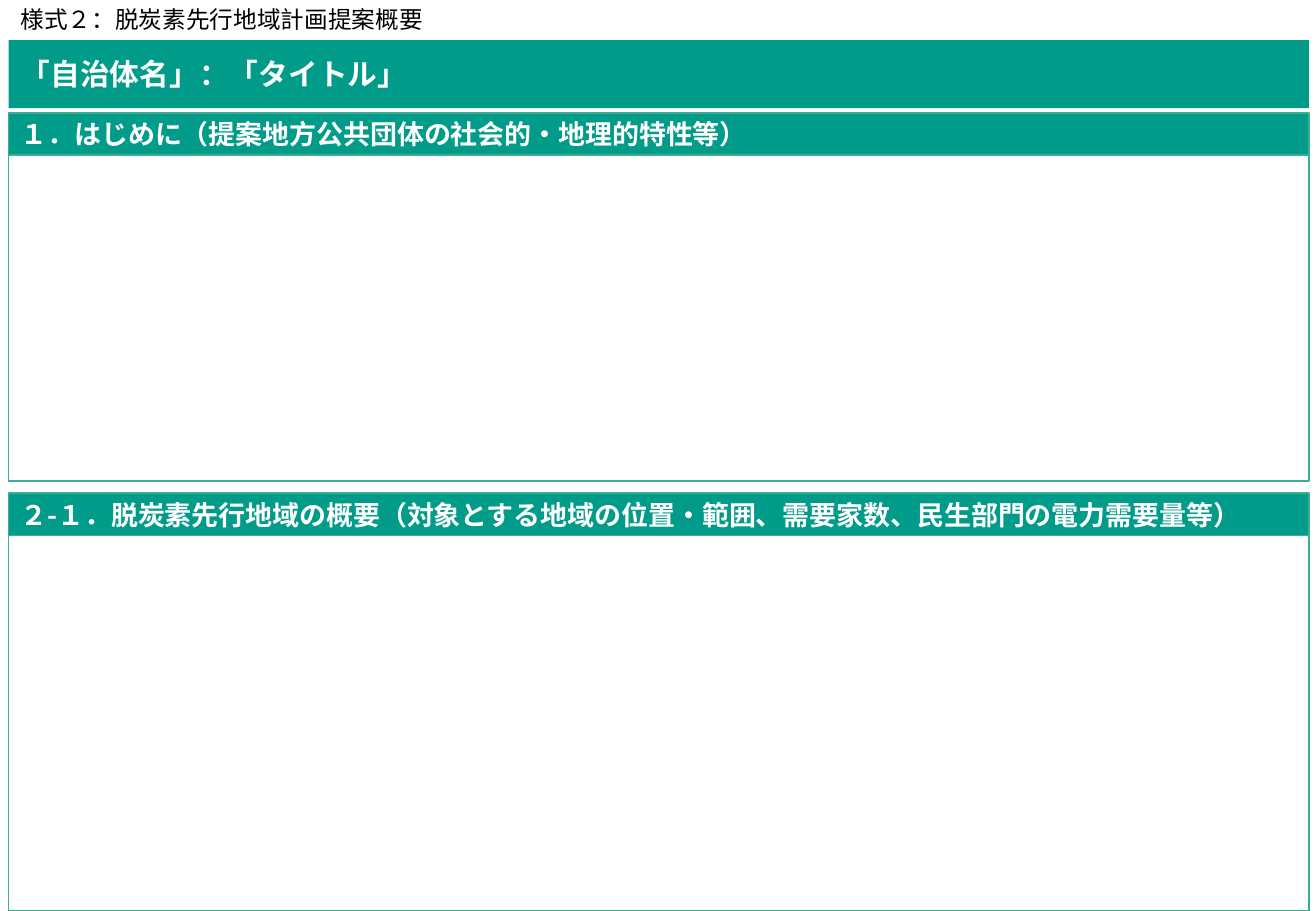
from lxml.etree import SubElement
from pptx import Presentation
from pptx.dml.color import RGBColor
from pptx.enum.shapes import MSO_SHAPE
from pptx.enum.text import MSO_ANCHOR, MSO_AUTO_SIZE, PP_ALIGN
from pptx.oxml.ns import qn
from pptx.util import Cm, Pt

GREEN = RGBColor(0x00, 0x9C, 0x89)
BORDER = RGBColor(0x3E, 0xAD, 0x92)
WHITE = RGBColor(0xFF, 0xFF, 0xFF)
BLACK = RGBColor(0x00, 0x00, 0x00)
FONT = "Noto Sans CJK JP"
LEFT, WIDTH = Cm(0.18), Cm(27.18)
HEADING_HEIGHT = Cm(0.89)


def write(box, text, size, color=WHITE, bold=True, wrap=True, anchor=MSO_ANCHOR.MIDDLE,
          auto_size=MSO_AUTO_SIZE.NONE):
    frame = box.text_frame
    frame.word_wrap = wrap
    frame.auto_size = auto_size
    frame.vertical_anchor = anchor
    para = frame.paragraphs[0]
    para.alignment = PP_ALIGN.LEFT
    para.line_spacing = 1.0
    span = para.add_run()
    span.text = text
    span.font.size = Pt(size)
    span.font.bold = bold
    span.font.color.rgb = color
    span.font.name = FONT
    SubElement(span.font._element, qn("a:ea"), typeface=FONT)


def add_panel(group, top, height, fill=None):
    panel = group.shapes.add_shape(MSO_SHAPE.RECTANGLE, LEFT, top, WIDTH, height)
    panel.shadow.inherit = False
    if fill is None:
        panel.fill.background()
    else:
        panel.fill.solid()
        panel.fill.fore_color.rgb = fill
    panel.line.color.rgb = BORDER
    panel.line.width = Pt(1)
    return panel


deck = Presentation()
deck.slide_width, deck.slide_height = Cm(27.51), Cm(19.05)
page = deck.slides.add_slide(deck.slide_layouts[5])

title = page.shapes.title
title.left, title.top, title.width, title.height = LEFT, Cm(0.84), WIDTH, Cm(1.42)
title.fill.solid()
title.fill.fore_color.rgb = GREEN
write(title, "「自治体名」：「タイトル」", size=17.6)

form_label = page.shapes.add_textbox(LEFT, Cm(-0.03), Cm(8.99), Cm(0.86))
write(form_label, "様式２：脱炭素先行地域計画提案概要", size=14, color=BLACK, bold=False,
      wrap=False, anchor=MSO_ANCHOR.TOP, auto_size=MSO_AUTO_SIZE.SHAPE_TO_FIT_TEXT)

# Heading, heading top, body top, body bottom
sections = [
    ("１．はじめに（提案地方公共団体の社会的・地理的特性等）", 2.36, 3.2, 10.06),
    ("２-１．脱炭素先行地域の概要（対象とする地域の位置・範囲、需要家数、民生部門の電力需要量等）",
     10.31, 11.2, 19.05),
]
for heading_text, heading_top, body_top, body_bottom in sections:
    section = page.shapes.add_group_shape()
    add_panel(section, Cm(body_top), Cm(body_bottom - body_top))
    heading = add_panel(section, Cm(heading_top), HEADING_HEIGHT, fill=GREEN)
    write(heading, heading_text, size=16)

deck.save("out.pptx")
